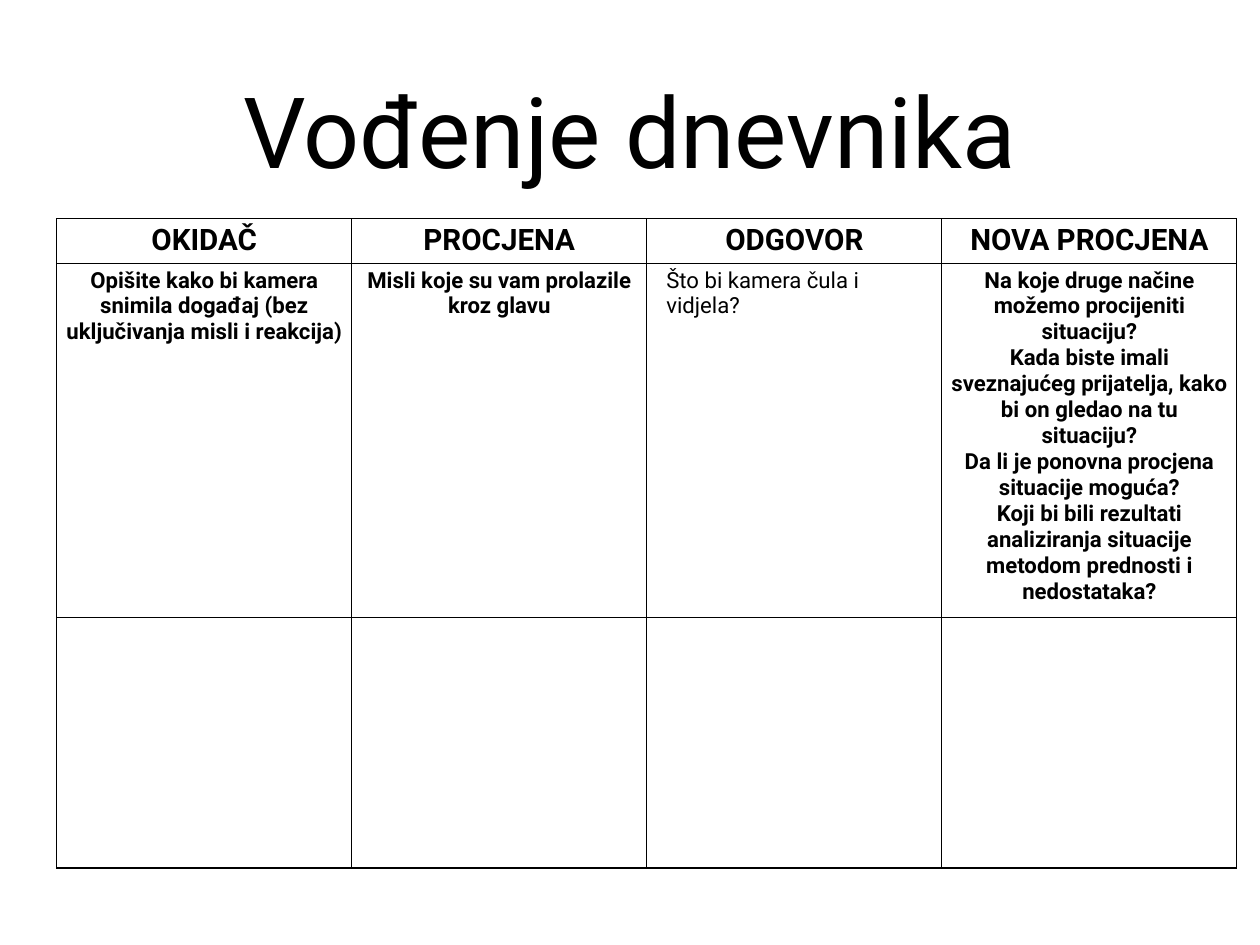
"""Build the journal-keeping slide with its four-column worksheet table."""
from lxml.etree import SubElement as Sub
from pptx import Presentation
from pptx.dml.color import RGBColor as Rgb
from pptx.enum.text import MSO_ANCHOR as Anchor, PP_ALIGN as Align
from pptx.oxml.ns import qn
from pptx.util import Inches, Pt

COLORS = {"paper": "FFFFFF", "ink": "000000"}
WIDTH, HEIGHT = Inches(14.22), Inches(10.67)
ROW_HEIGHTS = [0.5, 3.62, 2.83]
COLUMN_WIDTH = 3.33
HEADINGS = ["OKIDAČ", "PROCJENA", "ODGOVOR", "NOVA PROCJENA"]
PROMPTS = [
    ["Opišite kako bi kamera snimila događaj (bez uključivanja misli i reakcija)"],
    ["Misli koje su vam prolazile kroz glavu"],
    ["Što bi kamera čula i vidjela?"],
    [
        "Na koje druge načine možemo procijeniti situaciju?",
        "Kada biste imali sveznajućeg prijatelja, kako bi on gledao na tu situaciju?",
        "Da li je ponovna procjena situacije moguća?",
        "Koji bi bili rezultati analiziranja situacije metodom prednosti i nedostataka?",
    ],
]
FORMATS = {
    "title": {"size": Pt(80), "bold": False},
    "heading": {"size": Pt(24), "bold": True},
    "prompt": {"size": Pt(18), "bold": True},
    "plain": {"size": Pt(18), "bold": False},
}


def write(frame, lines, style):
    for index, line in enumerate(lines):
        para = frame.paragraphs[0] if index == 0 else frame.add_paragraph()
        para.alignment = Align.LEFT if style == "plain" else Align.CENTER
        if style == "plain":
            para._p.get_or_add_pPr().set("marL", str(Inches(0.12)))
        span = para.add_run()
        span.text = line
        for name, value in {"name": "Roboto", **FORMATS[style]}.items():
            setattr(span.font, name, value)
        span.font.color.rgb = Rgb.from_string(COLORS["ink"])


def draw_borders(cell):
    props = cell._tc.get_or_add_tcPr()
    for side in ("lnL", "lnR", "lnT", "lnB"):
        line = Sub(props, qn(f"a:{side}"), w=str(Pt(1)))
        Sub(Sub(line, qn("a:solidFill")), qn("a:srgbClr"), val=COLORS["ink"])


deck = Presentation()
deck.slide_width, deck.slide_height = WIDTH, HEIGHT
page = deck.slides.add_slide(deck.slide_layouts[6])
page.background.fill.solid()
page.background.fill.fore_color.rgb = Rgb.from_string(COLORS["paper"])

box = page.shapes.add_textbox(Inches(1.04), Inches(0.28), Inches(12.14), Inches(2.36))
frame = box.text_frame
frame.word_wrap = True
frame.vertical_anchor = Anchor.MIDDLE
for side in ("left", "right", "top", "bottom"):
    setattr(frame, f"margin_{side}", Inches(0.06))
write(frame, ["Vođenje dnevnika"], "title")

table = page.shapes.add_table(
    len(ROW_HEIGHTS), len(HEADINGS), Inches(0.64), Inches(2.47),
    Inches(COLUMN_WIDTH * len(HEADINGS)), Inches(sum(ROW_HEIGHTS)),
).table
table.first_row = table.horz_banding = False
for row, height in zip(table.rows, ROW_HEIGHTS):
    row.height = Inches(height)
for column in table.columns:
    column.width = Inches(COLUMN_WIDTH)
for cell in table.iter_cells():
    draw_borders(cell)
    cell.fill.background()

for index, (heading, prompts) in enumerate(zip(HEADINGS, PROMPTS)):
    write(table.cell(0, index).text_frame, [heading], "heading")
    style = "plain" if heading == "ODGOVOR" else "prompt"
    write(table.cell(1, index).text_frame, prompts, style)

deck.save("out.pptx")
